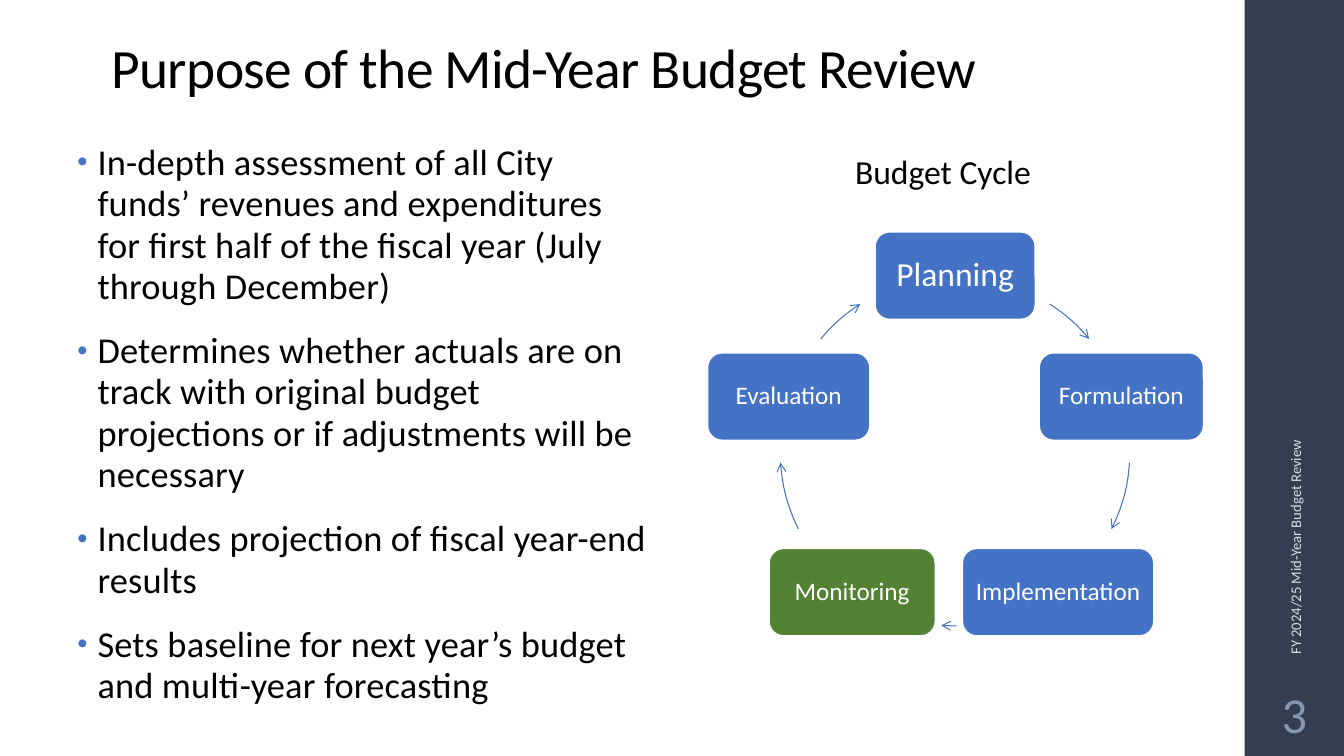
import pptx
import pptx.util
import pptx.dml.color
import pptx.enum.shapes
import pptx.enum.text
import pptx.oxml
import pptx.oxml.ns

Pt = pptx.util.Pt
SHAPE = pptx.enum.shapes.MSO_SHAPE
ANCHOR = pptx.enum.text.MSO_ANCHOR
ALIGN = pptx.enum.text.PP_ALIGN
NS = pptx.oxml.ns.nsdecls("a")
BLUE, GREEN, NAVY = "4472C4", "548235", "333F50"


def color(value):
    return pptx.dml.color.RGBColor.from_string(value)


def write(s, text, size, fill, align=ALIGN.LEFT, anchor=ANCHOR.TOP, spacing=0, first=True):
    tf = s.text_frame
    tf.word_wrap = True
    tf.vertical_anchor = anchor
    p = tf.paragraphs[0] if first else tf.add_paragraph()
    p.alignment = align
    r = p.add_run()
    r.text = text
    r.font.name = "Calibri"
    r.font.size = Pt(size)
    r.font.color.rgb = color(fill)
    if spacing:
        r.font._element.set("spc", str(spacing))
    return p


prs = pptx.Presentation()
prs.slide_width, prs.slide_height = Pt(960), Pt(540)
slide = prs.slides.add_slide(prs.slide_layouts[6])
shapes = slide.shapes

# Side band with footer and page number
band = shapes.add_shape(SHAPE.RECTANGLE, Pt(889), Pt(0), Pt(71), Pt(540))
band.shadow.inherit = False
band.fill.solid()
band.fill.fore_color.rgb = color(NAVY)
band.line.fill.background()

footer = shapes.add_textbox(Pt(784), Pt(319), Pt(282.4), Pt(28.8))
footer.rotation = 270
write(footer, "FY 2024/25 Mid-Year Budget Review", 10.5, "D6DCE5", anchor=ANCHOR.MIDDLE)

number = shapes.add_textbox(Pt(889), Pt(486), Pt(71), Pt(46.8))
write(number, "3", 36, "8497B0", ALIGN.CENTER, ANCHOR.MIDDLE)

# Title
title = shapes.add_textbox(Pt(72.7), Pt(22.3), Pt(763.2), Pt(53.3))
p = write(title, "Purpose of the Mid-Year Budget Review", 39.6, "000000",
          anchor=ANCHOR.BOTTOM, spacing=-50)
p.line_spacing = 0.9

# Purpose bullets
purposes = [
    "In-depth assessment of all City funds’ revenues and expenditures for first half "
    "of the fiscal year (July through December)",
    "Determines whether actuals are on track with original budget projections or if "
    "adjustments will be necessary",
    "Includes projection of fiscal year-end results",
    "Sets baseline for next year’s budget and multi-year forecasting",
]
body = shapes.add_textbox(Pt(48.2), Pt(97.9), Pt(421.9), Pt(342.7))
for i, purpose in enumerate(purposes):
    p = write(body, purpose, 26, "000000", spacing=10, first=i == 0)
    p.line_spacing = 0.95
    p.space_before, p.space_after = Pt(14), Pt(2)
    pPr = p._p.get_or_add_pPr()
    pPr.set("marL", str(Pt(14.4)))
    pPr.set("indent", str(-Pt(14.4)))
    for xml in (f'<a:buClr {NS}><a:srgbClr val="{BLUE}"/></a:buClr>',
                f'<a:buSzPct {NS} val="80000"/>',
                f'<a:buFont {NS} typeface="Arial"/>',
                f'<a:buChar {NS} char="•"/>'):
        pPr.append(pptx.oxml.parse_xml(xml))

# Budget cycle steps: label, left, top, width, text size, fill
steps = [
    ("Planning", 625, 165.6, 114.5, 24, BLUE),
    ("Formulation", 742.3, 252, 117.4, 18, BLUE),
    ("Implementation", 687.4, 391.7, 136.8, 18, BLUE),
    ("Monitoring", 549.3, 391.7, 118.8, 18, GREEN),
    ("Evaluation", 505.4, 252, 116, 18, BLUE),
]
for label, left, top, width, size, fill in steps:
    s = shapes.add_shape(SHAPE.ROUNDED_RECTANGLE, Pt(left), Pt(top), Pt(width), Pt(62.6))
    s.shadow.inherit = False
    s.fill.solid()
    s.fill.fore_color.rgb = color(fill)
    s.line.color.rgb = color("FFFFFF")
    s.line.width = Pt(1.1)
    tf = s.text_frame
    tf.margin_left = tf.margin_right = tf.margin_top = tf.margin_bottom = Pt(5)
    p = write(s, label, size, "FFFFFF", ALIGN.CENTER, ANCHOR.MIDDLE)
    p.line_spacing = 0.9

# Clockwise arrows on one circle: start and end angles in degrees
for start, end in [(302.8, 320.1), (3.8, 26.5), (89.5, 94.5), (153.5, 176.2), (219.9, 237.2)]:
    s = shapes.add_shape(SHAPE.ARC, Pt(557.3), Pt(197.3), Pt(249.8), Pt(249.8))
    s.shadow.inherit = False
    s.adjustments[0], s.adjustments[1] = start * 0.6, end * 0.6
    s.fill.background()
    s.line.color.rgb = color(BLUE)
    s.line.width = Pt(0.75)
    s.line._get_or_add_ln().append(pptx.oxml.parse_xml(f'<a:tailEnd {NS} type="arrow"/>'))

# Cycle heading
heading = shapes.add_textbox(Pt(576), Pt(104.4), Pt(195.1), Pt(36))
write(heading, "Budget Cycle", 24, "000000", ALIGN.CENTER)

prs.save("out.pptx")
